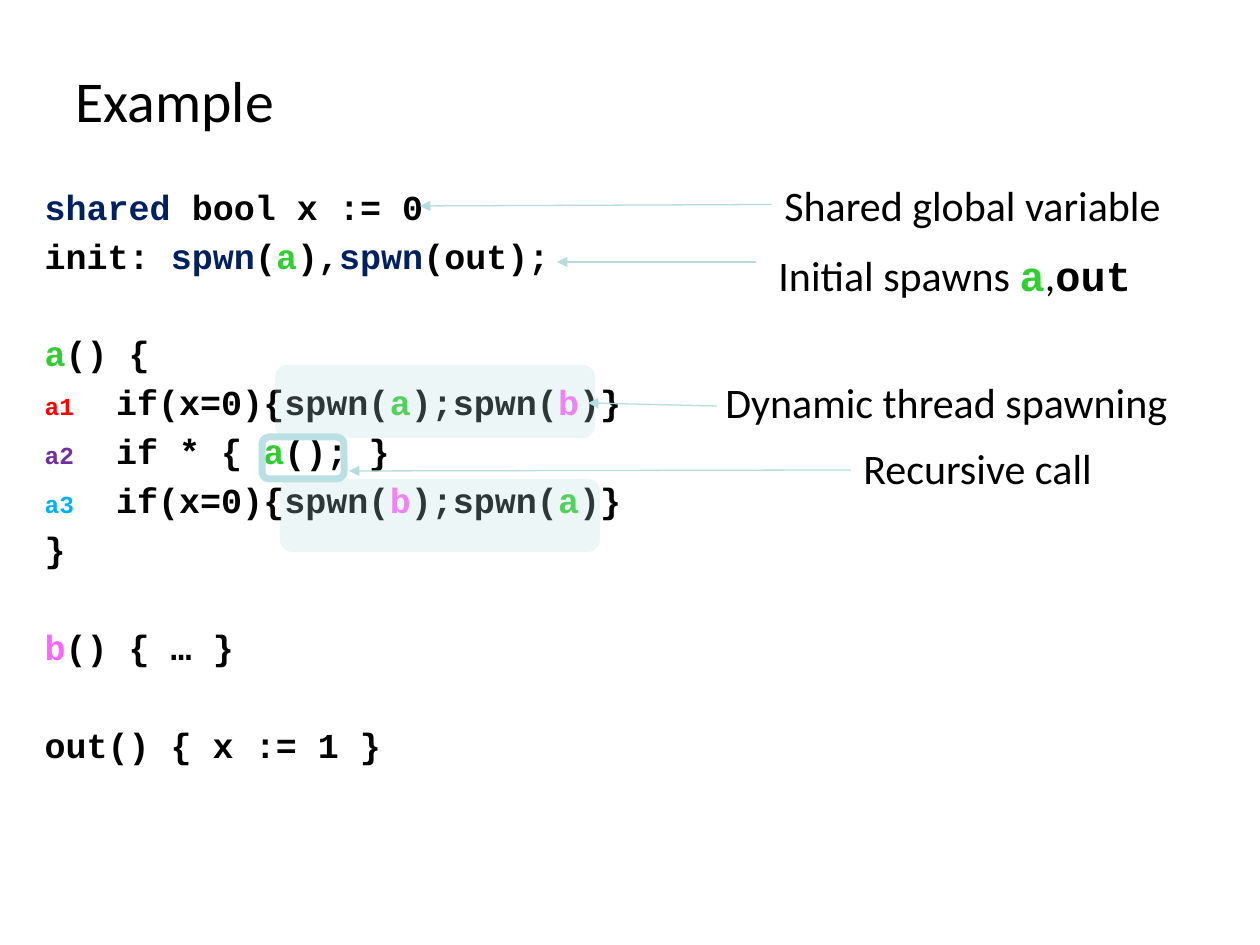
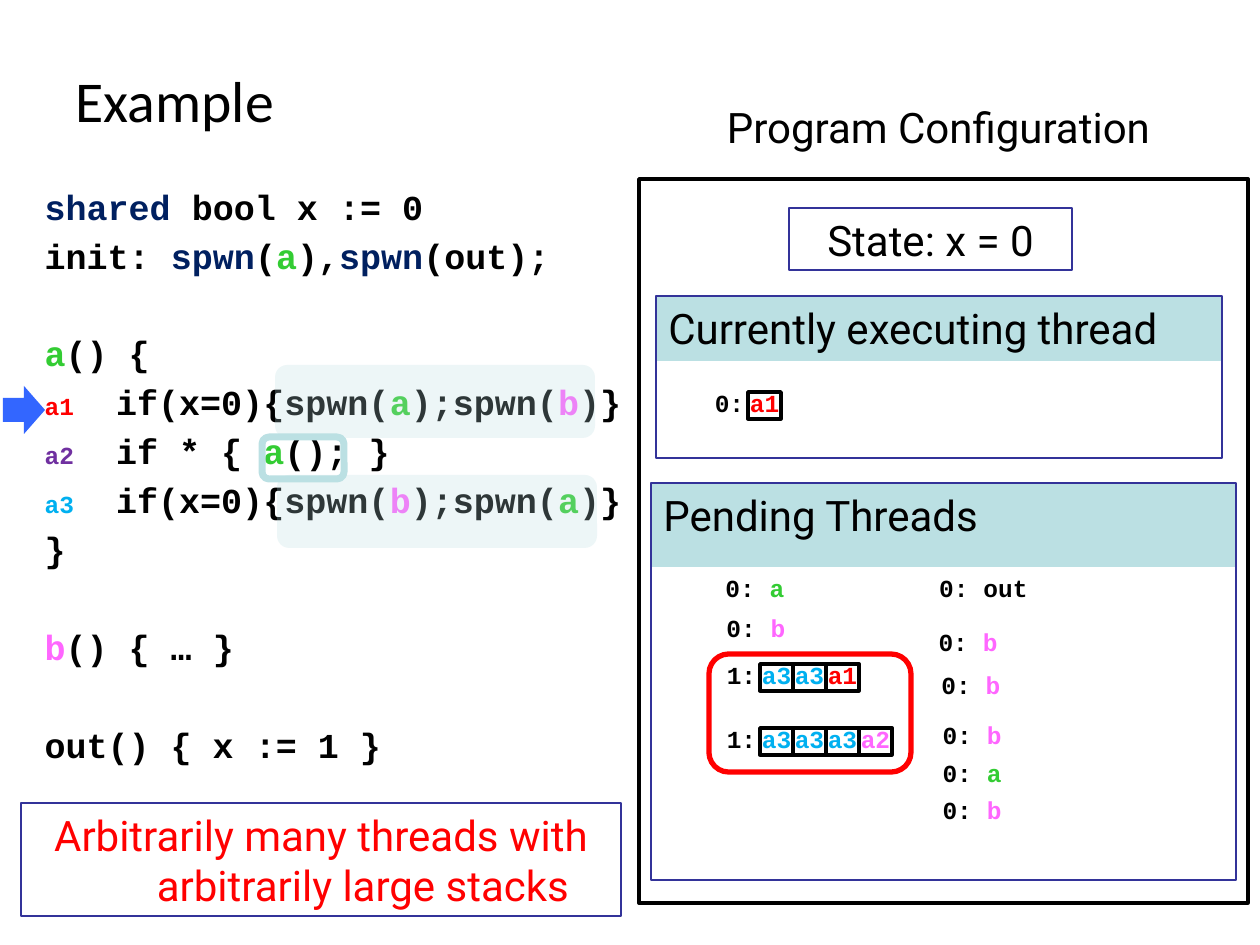
"""Build two slides on a program that spawns threads."""
from dataclasses import dataclass

from lxml import etree
from pptx import Presentation
from pptx.dml.color import RGBColor
from pptx.enum.shapes import MSO_CONNECTOR, MSO_SHAPE
from pptx.enum.text import MSO_ANCHOR, MSO_AUTO_SIZE, PP_ALIGN
from pptx.oxml.ns import qn
from pptx.util import Pt

RECT, ROUND, ARROW = MSO_SHAPE.RECTANGLE, MSO_SHAPE.ROUNDED_RECTANGLE, MSO_SHAPE.RIGHT_ARROW
LINE = MSO_CONNECTOR.STRAIGHT
LEFT, MID = PP_ALIGN.LEFT, PP_ALIGN.CENTER
TOP, CENTER = MSO_ANCHOR.TOP, MSO_ANCHOR.MIDDLE
FIXED = MSO_AUTO_SIZE.NONE


@dataclass(frozen=True)
class Theme:
    black: str = "000000"
    navy: str = "002060"
    green: str = "33CC33"
    pink: str = "FF66FF"
    red: str = "FF0000"
    purple: str = "7030A0"
    sky: str = "00B0F0"
    tint: str = "BADDE1"
    band: str = "BBE0E3"
    wire: str = "B6DCDF"
    edge: str = "333399"
    blue: str = "3366FF"
    head: int = 33
    large: int = 24
    code: int = 20
    small: int = 14
    sans: str = "Calibri"
    mono: str = "Courier New"
    panel: str = "Roboto"


T = Theme()
PX = 914400 / 126
SIZE = (1260, 945)

TITLE = "Example"
A, B = ("a", T.green), ("b", T.pink)
SPAWN = ("spwn", T.navy)
CODE = [
    [("shared", T.navy), " bool x := 0"],
    ["init: ", SPAWN, "(", A, "),", SPAWN, "(out);"],
    [A, "() {"],
    [("a1", T.red, T.small), "  if(x=0){spwn(", A, ");spwn(", B, ")}"],
    [("a2", T.purple, T.small), "  if * { ", A, "(); }"],
    [("a3", T.sky, T.small), "  if(x=0){spwn(", B, ");spwn(", A, ")}"],
    ["}"],
    [B, "() { … }"],
    ["out() { x := 1 }"],
]
GAPS = {2, 7, 8}

NOTES = [
    (["Shared global variable"], (772, 173, 415, 63), None, (420, 206)),
    (["Initial spawns ", ("a", T.green, T.large, T.mono), ",",
      ("out", T.black, T.large, T.mono)],
     (766, 243, 462, 63), (756, 262), (557, 262)),
    (["Dynamic thread spawning"], (713, 370, 494, 63), (717, 406), (588, 403)),
    (["Recursive call"], (851, 436, 347, 63), (851, 470), (349, 471)),
]

PANELS = [
    ("Pending Threads", (651, 483, 585, 397), 84),
    ("Currently executing thread", (656, 296, 566, 162), 65),
]
QUEUE = [
    (("out", T.black), 926, 581, 115),
    (A, 713, 581, 84),
    (B, 714, 621, 84),
    (B, 926, 635, 84),
    (B, 929, 678, 84),
    (B, 930, 728, 84),
    (A, 930, 766, 84),
    (B, 930, 803, 84),
]
A1, A2, A3 = ("a1", T.red), ("a2", T.pink), ("a3", T.sky)
STACKS = [
    ("0:", 702, 396, [A1]),
    ("1:", 714, 668, [A3, A3, A1]),
    ("1:", 714, 732, [A3, A3, A3, A2]),
]
CELL, LEAD = 33, 46


def emu(vals):
    return [round(v * PX) for v in vals]


def rgb(code):
    return RGBColor.from_string(code)


def write(frame, paras, size=T.large, font=T.sans, ink=T.black, align=LEFT,
          anchor=TOP, wrap=True, before=0, gaps=(), skip=0, lead=None,
          hang=0, pad=None):
    frame.word_wrap, frame.auto_size = wrap, FIXED
    frame.vertical_anchor = anchor
    if pad is not None:
        frame.margin_left = frame.margin_right = frame.margin_bottom = 0
        frame.margin_top = round(pad * PX)
    for i, runs in enumerate(paras):
        para = frame.add_paragraph() if i else frame.paragraphs[0]
        para.alignment, para.line_spacing = align, lead
        para.space_before = Pt(before + (skip if i in gaps else 0))
        prop = para._p.get_or_add_pPr()
        prop.set("marL", str(round(hang * PX)))
        prop.set("indent", str(round(-hang * PX)))
        etree.SubElement(prop, qn("a:buNone"))
        for item in runs:
            part = (item,) if isinstance(item, str) else item
            text, tone, pts, face = part + (None, ink, size, font)[len(part):]
            run = para.add_run()
            run.text = text
            run.font.size, run.font.name = Pt(pts), face
            run.font.bold = face == T.mono
            run.font.color.rgb = rgb(tone)


def label(slide, box, runs, **form):
    item = slide.shapes.add_textbox(*emu(box))
    write(item.text_frame, [runs], **form)
    return item


def shape(slide, kind, box, fill=None, line=None, width=0.75, alpha=None):
    item = slide.shapes.add_shape(kind, *emu(box))
    item.shadow.inherit = False
    if fill:
        item.fill.solid()
        item.fill.fore_color.rgb = rgb(fill)
        if alpha:
            tone = item.element.spPr.find(qn("a:solidFill"))[0]
            etree.SubElement(tone, qn("a:alpha"), val=str(alpha * 1000))
    else:
        item.fill.background()
    if line:
        item.line.color.rgb, item.line.width = rgb(line), Pt(width)
    else:
        item.line.fill.background()
    return item


def arrow(slide, start, end, owner=None):
    item = slide.shapes.add_connector(LINE, *emu(start + end))
    if owner:
        item.begin_connect(owner, 1)
    item.line.color.rgb, item.line.width = rgb(T.wire), Pt(0.75)
    props = item.element.spPr
    etree.SubElement(props.find(qn("a:ln")), qn("a:tailEnd"), type="triangle")
    etree.SubElement(props, qn("a:effectLst"))


def base(deck, left, top):
    slide = deck.slides.add_slide(deck.slide_layouts[1])
    title, body = slide.placeholders
    for item, box in ((title, (63, 20, 1134, 158)), (body, (32, 179, 640, 665))):
        item.left, item.top, item.width, item.height = emu(box)
    write(title.text_frame, [[TITLE]], size=T.head, anchor=CENTER)
    write(body.text_frame, CODE, size=T.code, font=T.mono, before=3.9,
          gaps=GAPS, skip=28)
    for x, y in ((left, top), (275, 365)):
        shape(slide, ROUND, (x, y, 320, 73), fill=T.tint, alpha=25)
    shape(slide, ROUND, (262, 437, 82, 42), line=T.band, width=4)
    return slide


def notes(deck):
    slide = base(deck, 280, 479)
    for runs, box, start, end in NOTES:
        item = label(slide, box, runs)
        side = (box[0], box[1] + box[3] // 2)
        arrow(slide, start or side, end, None if start else item)


def config(deck):
    slide = base(deck, 277, 475)
    text = {"font": T.panel, "before": 2}
    mono = {"size": T.small, "font": T.mono, "align": MID, "before": 3,
            "lead": 0.45, "wrap": False}
    label(slide, (702, 95, 473, 63), ["Program Configuration"], align=MID, **text)
    shape(slide, RECT, (639, 179, 609, 724), line=T.black, width=2)
    for name, box, high in PANELS:
        shape(slide, RECT, box[:3] + (high,), fill=T.band)
        item = shape(slide, RECT, box, line=T.edge)
        write(item.text_frame, [[name]], **text)
    state = shape(slide, RECT, (789, 208, 283, 62), line=T.edge)
    write(state.text_frame, [["State: x = 0"]], align=MID, **text)
    for name, x, y, wide in QUEUE:
        label(slide, (x, y, wide, 30), ["0: ", name], **mono)
    for count, x, y, cells in STACKS:
        label(slide, (x, y, 55, 30), [count], **mono)
        for i, name in enumerate(cells):
            box = (x + LEAD + i * CELL, y - 4, CELL, 27)
            item = shape(slide, RECT, box, line=T.black, width=2)
            write(item.text_frame, [[name]], pad=10, **mono)
    shape(slide, ARROW, (3, 386, 42, 48), fill=T.blue)
    moral = shape(slide, RECT, (21, 803, 600, 113), line=T.edge)
    write(moral.text_frame, [["Arbitrarily many threads with arbitrarily large stacks"]],
          ink=T.red, align=MID, hang=84, **text)
    shape(slide, ROUND, (709, 654, 202, 118), line=T.red, width=3)


def main():
    deck = Presentation()
    deck.slide_width, deck.slide_height = emu(SIZE)
    notes(deck)
    config(deck)
    deck.save("out.pptx")


if __name__ == "__main__":
    main()
